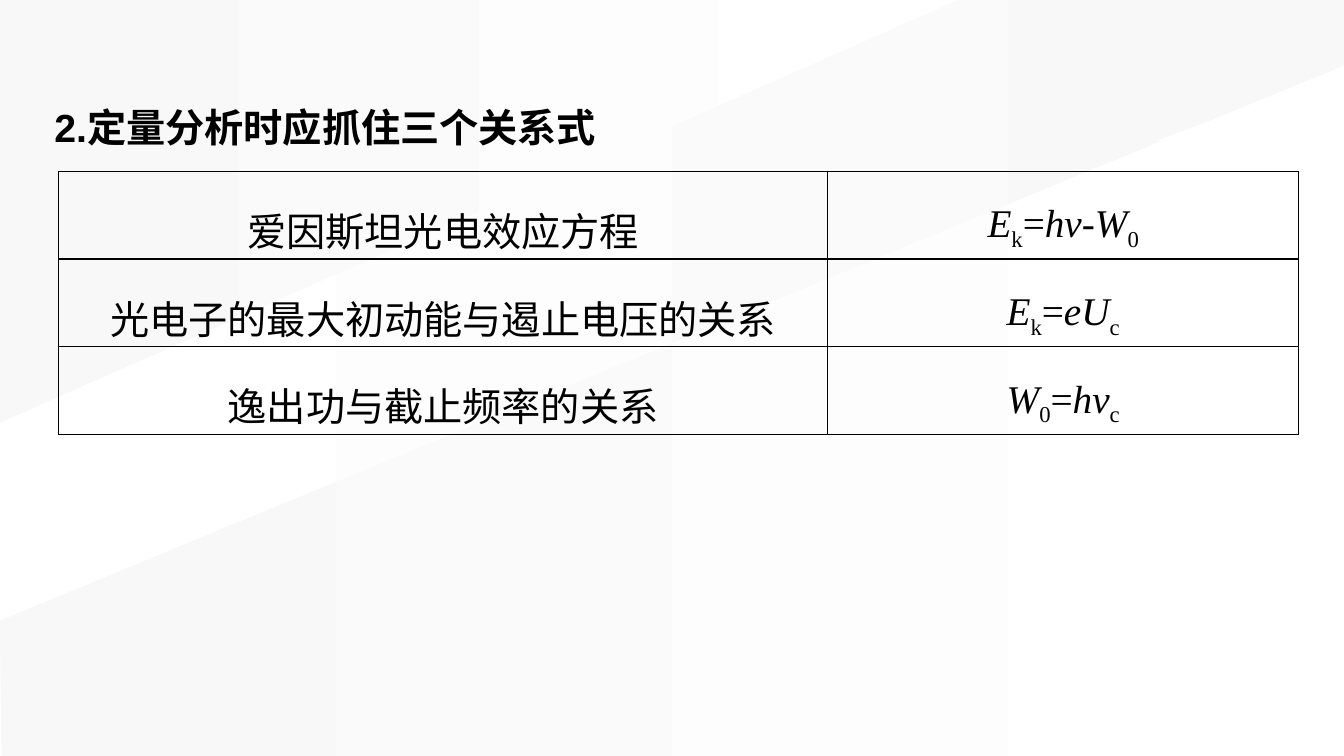
import pptx
import pptx.dml.color
import pptx.enum.dml
import pptx.enum.shapes
import pptx.enum.text
import pptx.oxml
import pptx.oxml.ns
import pptx.util

Inches = pptx.util.Inches
COLORS = {"text": "000000", "white": "FFFFFF", "shade": "F8F8F8", "pattern": "F2F2F2"}
WIDTH, HEIGHT = 13.33, 7.5

# Each formula is a list of (text, format) pairs
ITALIC = {"italic": True}
SUBSCRIPT = {"baseline": -25000}
PLAIN = {}
RELATIONS = [
    ("爱因斯坦光电效应方程",
     [("E", ITALIC), ("k", SUBSCRIPT), ("=", PLAIN), ("hν", ITALIC),
      ("-", PLAIN), ("W", ITALIC), ("0", SUBSCRIPT)]),
    ("光电子的最大初动能与遏止电压的关系",
     [("E", ITALIC), ("k", SUBSCRIPT), ("=", PLAIN), ("eU", ITALIC), ("c", SUBSCRIPT)]),
    ("逸出功与截止频率的关系",
     [("W", ITALIC), ("0", SUBSCRIPT), ("=", PLAIN), ("hν", ITALIC), ("c", SUBSCRIPT)]),
]


def color(name):
    return pptx.dml.color.RGBColor.from_string(COLORS[name])


def add_text(paragraph, text, font="Times New Roman", size=28, bold=False,
             italic=False, baseline=0):
    run = paragraph.add_run()
    run.text = text
    run.font.name = font
    run.font.size = pptx.util.Pt(size)
    run.font.bold = bold
    run.font.italic = italic
    run.font.color.rgb = color("text")
    if baseline:
        run._r.get_or_add_rPr().set("baseline", str(baseline))


class SlideBuilder:
    def __init__(self, presentation):
        self.slide = presentation.slides.add_slide(presentation.slide_layouts[5])
        self.line_spacing = 1.5
        self.border_width = pptx.util.Pt(1)

    def background(self):
        fill = self.slide.background.fill
        fill.patterned()
        fill.pattern = pptx.enum.dml.MSO_PATTERN.PERCENT_5
        fill.fore_color.rgb = color("pattern")
        fill.back_color.rgb = color("white")

    def paint(self, shape, colors):
        """Fill with one colour, or with a gradient running from right to left."""
        shape.shadow.inherit = False
        shape.line.fill.background()
        if len(colors) == 1:
            shape.fill.solid()
            shape.fill.fore_color.rgb = color(colors[0])
            return
        shape.fill.gradient()
        shape.fill.gradient_angle = 180
        for position, (stop, name) in enumerate(zip(shape.fill.gradient_stops, colors)):
            stop.position = position
            stop.color.rgb = color(name)

    def rectangle(self, left, top, width, height, colors):
        shape = self.slide.shapes.add_shape(
            pptx.enum.shapes.MSO_SHAPE.RECTANGLE,
            Inches(left), Inches(top), Inches(width), Inches(height))
        self.paint(shape, colors)

    def polygon(self, points, colors):
        corners = [(Inches(x), Inches(y)) for x, y in points]
        builder = self.slide.shapes.build_freeform(*corners[0])
        builder.add_line_segments(corners[1:], close=True)
        self.paint(builder.convert_to_shape(), colors)

    def title(self, text, left, top, width, height):
        shape = self.slide.shapes.title
        shape.left, shape.top = Inches(left), Inches(top)
        shape.width, shape.height = Inches(width), Inches(height)
        frame = shape.text_frame
        frame.word_wrap = True
        frame.auto_size = pptx.enum.text.MSO_AUTO_SIZE.NONE
        frame.vertical_anchor = pptx.enum.text.MSO_ANCHOR.TOP
        paragraph = frame.paragraphs[0]
        paragraph.alignment = pptx.enum.text.PP_ALIGN.LEFT
        paragraph.line_spacing = self.line_spacing
        add_text(paragraph, text, font="Arial", bold=True)
        # Bring the title in front of the backdrop
        shape.element.getparent().append(shape.element)

    def cell(self, cell, runs):
        cell.margin_left = cell.margin_right = Inches(0.01)
        cell.margin_top = cell.margin_bottom = Inches(0.01)
        cell.vertical_anchor = pptx.enum.text.MSO_ANCHOR.MIDDLE
        paragraph = cell.text_frame.paragraphs[0]
        paragraph.alignment = pptx.enum.text.PP_ALIGN.CENTER
        paragraph.line_spacing = self.line_spacing
        for text, style in runs:
            add_text(paragraph, text, **style)
        # Borders come before the fill in the cell properties
        properties = cell._tc.get_or_add_tcPr()
        for side in ("lnL", "lnR", "lnT", "lnB"):
            properties.append(pptx.oxml.parse_xml(
                f'<a:{side} {pptx.oxml.ns.nsdecls("a")} w="{self.border_width}">'
                f'<a:solidFill><a:srgbClr val="{COLORS["text"]}"/></a:solidFill>'
                f'</a:{side}>'))
        cell.fill.background()

    def table(self, rows, left, top, widths, row_height):
        table = self.slide.shapes.add_table(
            len(rows), len(widths), Inches(left), Inches(top),
            Inches(sum(widths)), Inches(row_height * len(rows))).table
        table.first_row = table.horz_banding = False
        for column, width in zip(table.columns, widths):
            column.width = Inches(width)
        for index, (name, formula) in enumerate(rows):
            table.rows[index].height = Inches(row_height)
            self.cell(table.cell(index, 0), [(name, PLAIN)])
            self.cell(table.cell(index, 1), formula)


def main():
    presentation = pptx.Presentation()
    presentation.slide_width = Inches(WIDTH)
    presentation.slide_height = Inches(HEIGHT)
    builder = SlideBuilder(presentation)

    # Backdrop of pale diagonal bands
    builder.background()
    builder.rectangle(0, 0, WIDTH, HEIGHT, ["shade", "white"])
    builder.polygon([(0, 0), (9.5, 0), (0, 4.19)], ["white", "shade"])
    builder.polygon([(0, 6.16), (WIDTH, 0.65), (WIDTH, HEIGHT), (0.02, HEIGHT)],
                    ["white", "shade"])
    builder.polygon([(11.46, 1.4), (WIDTH, 0.71), (WIDTH, 1.4)], ["white"])

    # Heading and the three relations
    builder.title("2.定量分析时应抓住三个关系式", 0.44, 0.74, 12.44, 0.72)
    builder.table(RELATIONS, 0.58, 1.7, [7.63, 4.67], 0.87)

    presentation.save("out.pptx")


if __name__ == "__main__":
    main()
